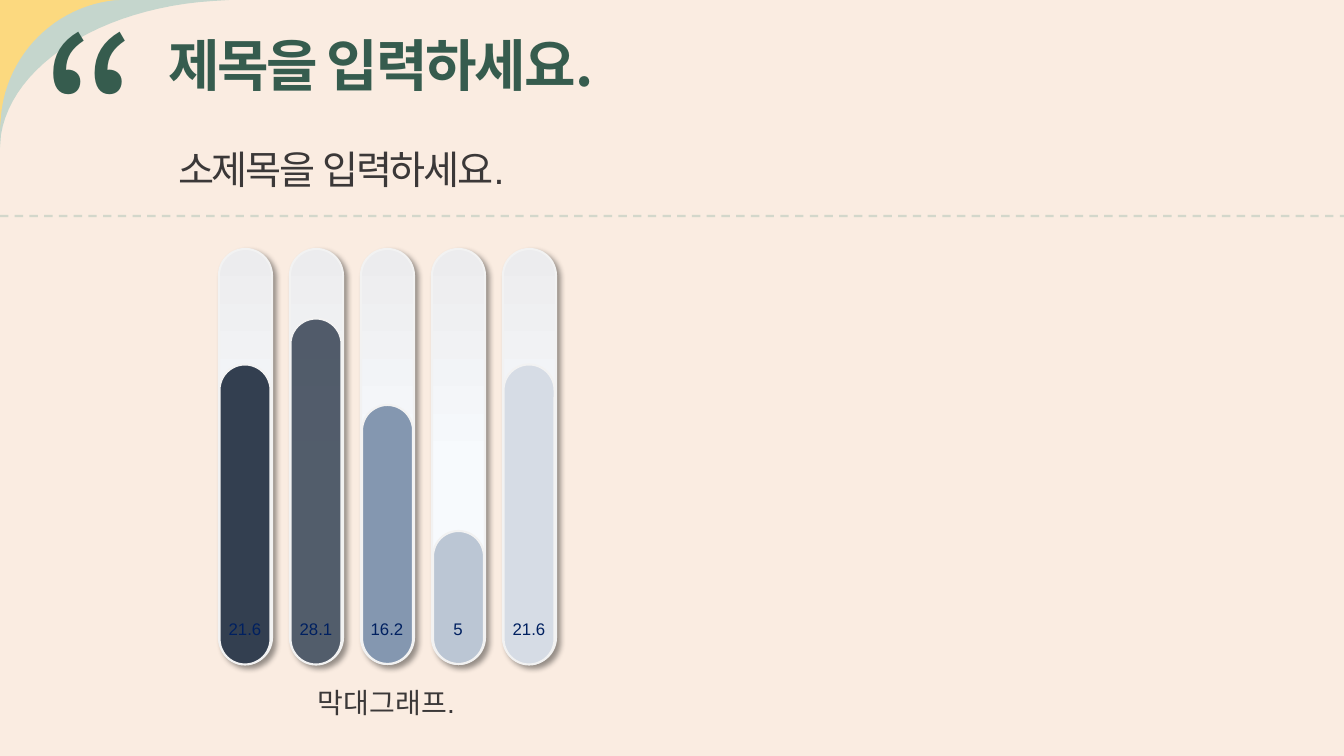
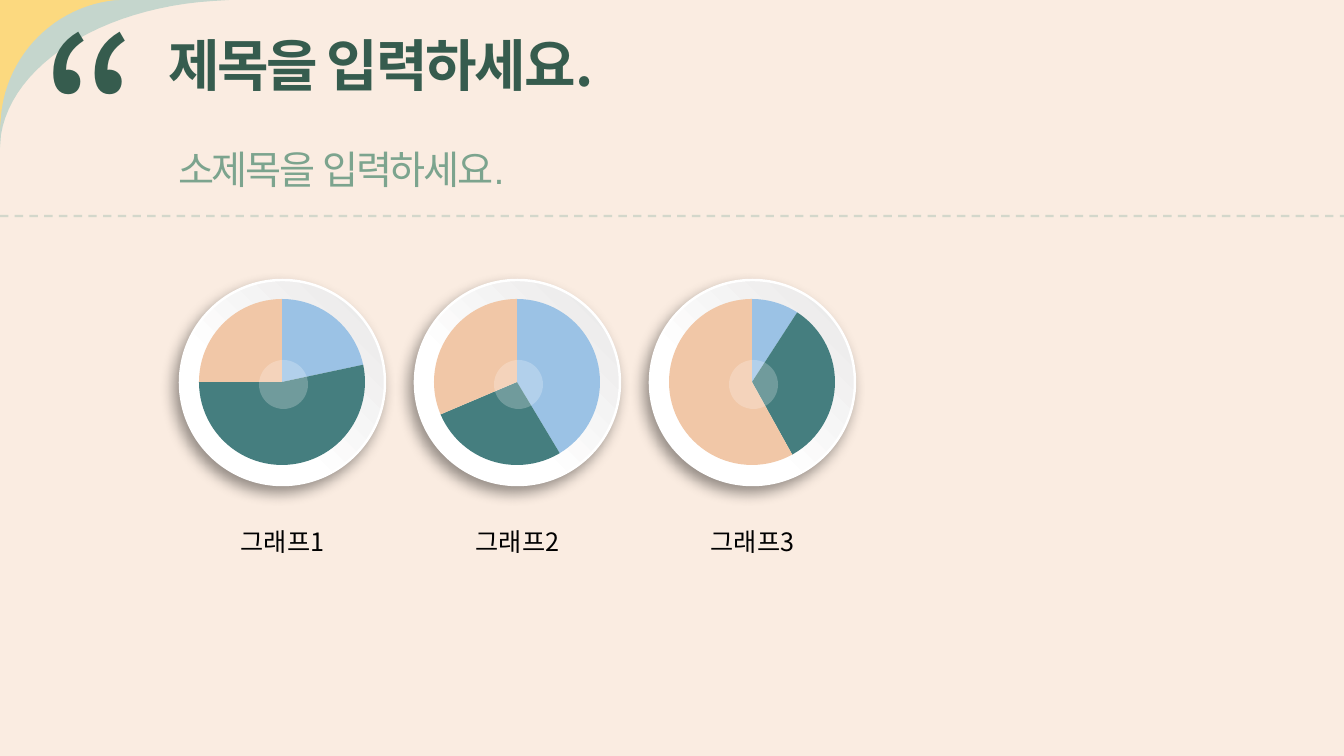
from dataclasses import dataclass

from lxml.etree import SubElement
from pptx import Presentation
from pptx.dml.color import RGBColor
from pptx.enum.dml import MSO_LINE
from pptx.enum.shapes import MSO_CONNECTOR, MSO_SHAPE
from pptx.enum.text import MSO_ANCHOR, MSO_AUTO_SIZE, PP_ALIGN
from pptx.oxml import parse_xml
from pptx.oxml.ns import nsdecls, qn
from pptx.shapes.autoshape import Shape
from pptx.shapes.base import BaseShape
from pptx.shapes.shapetree import GroupShapes, SlideShapes
from pptx.slide import Slide, SlideLayout
from pptx.text.text import TextFrame
from pptx.util import Emu, Pt

# Page
WIDE, HIGH = 1344, 756
SCALE = 12192000 / WIDE

# Colours
PEACH = RGBColor(0xF6, 0xDE, 0xCA)
MINT = RGBColor(0xC5, 0xD6, 0xCD)
GOLD = RGBColor(0xFC, 0xD9, 0x7F)
GREEN = RGBColor(0x36, 0x5C, 0x4E)
CREAM = RGBColor(0xFA, 0xED, 0xE2)
SAGE = RGBColor(0x7C, 0xA4, 0x8E)
RULE = RGBColor(0xA2, 0xBE, 0xAF)
DARK = RGBColor(0x3B, 0x38, 0x38)
BLACK = RGBColor(0x00, 0x00, 0x00)
WHITE = RGBColor(0xFF, 0xFF, 0xFF)
NAVY = RGBColor(0x00, 0x20, 0x60)
SLATE = RGBColor(0x33, 0x3F, 0x50)
STEEL = RGBColor(0x84, 0x97, 0xB0)
PALE = RGBColor(0xD6, 0xDC, 0xE5)
EDGE = RGBColor(0xF2, 0xF2, 0xF2)
ICE = RGBColor(0xF7, 0xFA, 0xFD)
MIST = RGBColor(0xEC, 0xEC, 0xEE)
GREY = RGBColor(0xE7, 0xE6, 0xE6)
BLUE = RGBColor(0x9B, 0xC2, 0xE5)
TEAL = RGBColor(0x45, 0x7E, 0x7F)
SKIN = RGBColor(0xF1, 0xC7, 0xA7)

SANS, ARIAL = "Noto Sans CJK KR", "Arial"
Shapes = SlideShapes | GroupShapes
Point = tuple[float, float]


@dataclass(frozen=True)
class Box:
    x: int
    y: int
    w: int
    h: int

    def emu(self) -> list[Emu]:
        return [px(n) for n in (self.x, self.y, self.w, self.h)]


@dataclass(frozen=True)
class Font:
    name: str
    size: int
    color: RGBColor
    bold: bool = False
    space: int = 0


@dataclass(frozen=True)
class Bar:
    value: str
    size: int
    color: RGBColor
    alpha: int = 100


@dataclass(frozen=True)
class Dial:
    label: str
    cuts: tuple[int, int, int]


@dataclass(frozen=True)
class Shade:
    alpha: int
    blur: int
    dist: int
    angle: int


@dataclass(frozen=True)
class Arc:
    color: RGBColor
    start: Point
    curve: tuple[Point, Point, Point, Point]
    end: Point


ARCS = (
    Arc(MINT, (229, 0), ((213, 1), (101, 8), (12, 65), (1, 135)), (0, 148)),
    Arc(GOLD, (119, 0), ((116, 0), (55, 6), (7, 54), (1, 115)), (0, 128)),
)
BARS = (
    Bar("21.6", 300, SLATE),
    Bar("28.1", 346, SLATE, 84),
    Bar("16.2", 259, STEEL),
    Bar("5", 133, STEEL, 52),
    Bar("21.6", 300, PALE),
)
# Angles at which the blue, teal and skin slices begin
DIALS = (
    Dial("그래프1", (270, 348, 180)),
    Dial("그래프2", (270, 59, 157)),
    Dial("그래프3", (270, 303, 61)),
)


# Drawing helpers
def px(n: float) -> Emu:
    return Emu(round(n * SCALE))


def fade(shape: BaseShape, alpha: int) -> None:
    """Make the shape's first colour see-through."""
    tint = next(shape.element.spPr.iter(qn("a:srgbClr")))
    SubElement(tint, qn("a:alpha"), val=str(alpha * 1000))


def blend(shape: Shape, stops: dict[int, RGBColor], course: str) -> None:
    marks = "".join(
        f'<a:gs pos="{pos * 1000}"><a:srgbClr val="{color}"/></a:gs>'
        for pos, color in stops.items()
    )
    shape.element.spPr.insert(2, parse_xml(
        f'<a:gradFill {nsdecls("a")} rotWithShape="1">'
        f"<a:gsLst>{marks}</a:gsLst>{course}</a:gradFill>"
    ))


def cast(shape: Shape, shade: Shade) -> None:
    home = shape.element.spPr.find(qn("a:effectLst"))
    home.append(parse_xml(
        f'<a:outerShdw {nsdecls("a")} blurRad="{Pt(shade.blur)}" '
        f'dist="{Pt(shade.dist)}" dir="{shade.angle * 60000}" algn="ctr" '
        f'rotWithShape="0"><a:srgbClr val="000000">'
        f'<a:alpha val="{shade.alpha * 1000}"/></a:srgbClr></a:outerShdw>'
    ))


def draw(shapes: Shapes, kind: MSO_SHAPE, box: Box,
         fill: RGBColor | None = None, alpha: int = 100,
         edge: RGBColor | None = None, width: float = 1.5) -> Shape:
    shape = shapes.add_shape(kind, *box.emu())
    shape.shadow.inherit = False
    if fill is not None:
        shape.fill.solid()
        shape.fill.fore_color.rgb = fill
        if alpha < 100:
            fade(shape, alpha)
    if edge is None:
        shape.line.fill.background()
    else:
        shape.line.color.rgb = edge
        shape.line.width = Pt(width)
    return shape


def write(frame: TextFrame, text: str, font: Font, align: PP_ALIGN) -> None:
    para = frame.paragraphs[0]
    para.alignment = align
    run = para.add_run()
    run.text = text
    run.font.name = font.name
    run.font.size = Pt(font.size)
    run.font.bold = font.bold
    run.font.color.rgb = font.color
    props = run.font._element
    if font.space:
        props.set("spc", str(font.space))
    for tag in ("a:ea", "a:cs"):
        SubElement(props, qn(tag), typeface=font.name)


def label(shapes: Shapes, box: Box, text: str, font: Font) -> Shape:
    shape = shapes.add_textbox(*box.emu())
    shape.text_frame.word_wrap = False
    write(shape.text_frame, text, font, PP_ALIGN.CENTER)
    return shape


def fill_in(shape: Shape, box: Box, text: str, font: Font) -> None:
    """Move a placeholder and give it one plain line."""
    shape.left, shape.top, shape.width, shape.height = box.emu()
    frame = shape.text_frame
    frame.auto_size = MSO_AUTO_SIZE.NONE
    frame.vertical_anchor = MSO_ANCHOR.MIDDLE
    write(frame, text, font, PP_ALIGN.LEFT)
    para = frame.paragraphs[0]
    para.space_before = Pt(0)
    props = para._p.get_or_add_pPr()
    props.set("marL", "0")
    props.set("indent", "0")
    SubElement(props, qn("a:buNone"))


# Shared parts
def bend(curve: tuple[Point, ...], steps: int = 24) -> list[Point]:
    """Points along a cubic curve."""
    spots = []
    for step in range(steps + 1):
        t = step / steps
        mix = ((1 - t) ** 3, 3 * t * (1 - t) ** 2, 3 * t * t * (1 - t), t ** 3)
        spots.append((sum(m * p[0] for m, p in zip(mix, curve)),
                      sum(m * p[1] for m, p in zip(mix, curve))))
    return spots


def adorn(slide: Slide, layout: SlideLayout) -> None:
    """Draw the backdrop, then hand it to the layout."""
    shapes = slide.shapes
    parts: list[BaseShape] = [
        draw(shapes, MSO_SHAPE.RECTANGLE, Box(0, 0, WIDE, HIGH), PEACH, 55)
    ]
    for arc in ARCS:
        pen = shapes.build_freeform(0, 0)
        spots = [arc.start, *bend(arc.curve), arc.end]
        pen.add_line_segments([(px(x), px(y)) for x, y in spots], close=True)
        shape = pen.convert_to_shape()
        shape.shadow.inherit = False
        shape.fill.solid()
        shape.fill.fore_color.rgb = arc.color
        shape.line.fill.background()
        parts.append(shape)
    quote = label(shapes, Box(21, -19, 138, 265), "“", Font(SANS, 150, GREEN))
    props = next(quote.element.iter(qn("a:rPr")))
    props.insert(0, parse_xml(
        f'<a:ln {nsdecls("a")} w="{Pt(2)}"><a:solidFill>'
        f'<a:srgbClr val="{CREAM}"/></a:solidFill></a:ln>'
    ))
    parts.append(quote)
    for part in parts:
        layout.shapes.element.append(part.element)


def head(slide: Slide, color: RGBColor) -> None:
    fill_in(slide.shapes.title, Box(158, 25, 825, 78), "제목을 입력하세요.",
            Font(SANS, 40, GREEN, True, -150))
    fill_in(slide.placeholders[1], Box(168, 140, 438, 57),
            "소제목을 입력하세요.", Font(ARIAL, 28, color, space=-150))
    rule = slide.shapes.add_connector(
        MSO_CONNECTOR.STRAIGHT, px(0), px(216), px(WIDE), px(216))
    rule.line.color.rgb = RULE
    rule.line.width = Pt(1.5)
    rule.line.dash_style = MSO_LINE.DASH
    fade(rule, 44)
    SubElement(rule.element.spPr, qn("a:effectLst"))


# Bar slide
def tube(shapes: Shapes, mid: int, base: int, size: int, thick: int,
         fill: RGBColor | None = None, alpha: int = 100) -> Shape:
    """An upright pill: a level one turned by a quarter."""
    box = Box(mid - size // 2, base - (size + thick) // 2, size, thick)
    pill = draw(shapes, MSO_SHAPE.ROUNDED_RECTANGLE, box, fill, alpha, EDGE)
    pill.adjustments[0] = 0.5
    pill.rotation = 90
    return pill


def plot(slide: Slide) -> None:
    shapes = slide.shapes.add_group_shape().shapes
    for i, bar in enumerate(BARS):
        mid = 245 + 71 * i
        track = tube(shapes, mid, 664, 415, 53)
        blend(track, {47: ICE, 100: MIST}, '<a:lin ang="10800000" scaled="0"/>')
        cast(track, Shade(40, 4, 3, 45))
        tube(shapes, mid, 664, bar.size, 51, bar.color, bar.alpha)
        label(shapes, Box(mid - 34, 614, 68, 40), bar.value,
              Font(ARIAL, 12, NAVY))
    label(slide.shapes, Box(303, 681, 167, 75), "막대그래프.",
          Font(ARIAL, 20, DARK))


# Dial slide
def spin(slide: Slide) -> None:
    for i, dial in enumerate(DIALS):
        x = 180 + 235 * i
        shapes = slide.shapes.add_group_shape().shapes
        plate = draw(shapes, MSO_SHAPE.OVAL, Box(x, 280, 205, 205),
                     edge=WHITE, width=1.75)
        blend(plate, {0: WHITE, 35: WHITE, 100: GREY},
              '<a:path path="circle">'
              '<a:fillToRect t="100000" r="100000"/></a:path>')
        cast(plate, Shade(40, 10, 6, 126))
        ends = dial.cuts[1:] + dial.cuts[:1]
        for color, start, end in zip((BLUE, TEAL, SKIN), dial.cuts, ends):
            wedge = draw(shapes, MSO_SHAPE.PIE, Box(x + 19, 299, 166, 166),
                         color)
            wedge.adjustments[0] = start * 0.6
            wedge.adjustments[1] = end * 0.6
        draw(shapes, MSO_SHAPE.OVAL, Box(x + 79, 360, 49, 49), WHITE, 23)
        label(slide.shapes, Box(x + 47, 521, 111, 40), dial.label,
              Font(SANS, 18, BLACK))


def main() -> None:
    deck = Presentation()
    deck.slide_width, deck.slide_height = px(WIDE), px(HIGH)
    layout = deck.slide_layouts[1]
    first, second = (deck.slides.add_slide(layout) for _ in range(2))
    adorn(first, layout)
    head(first, DARK)
    plot(first)
    head(second, SAGE)
    spin(second)
    deck.save("out.pptx")


if __name__ == "__main__":
    main()
